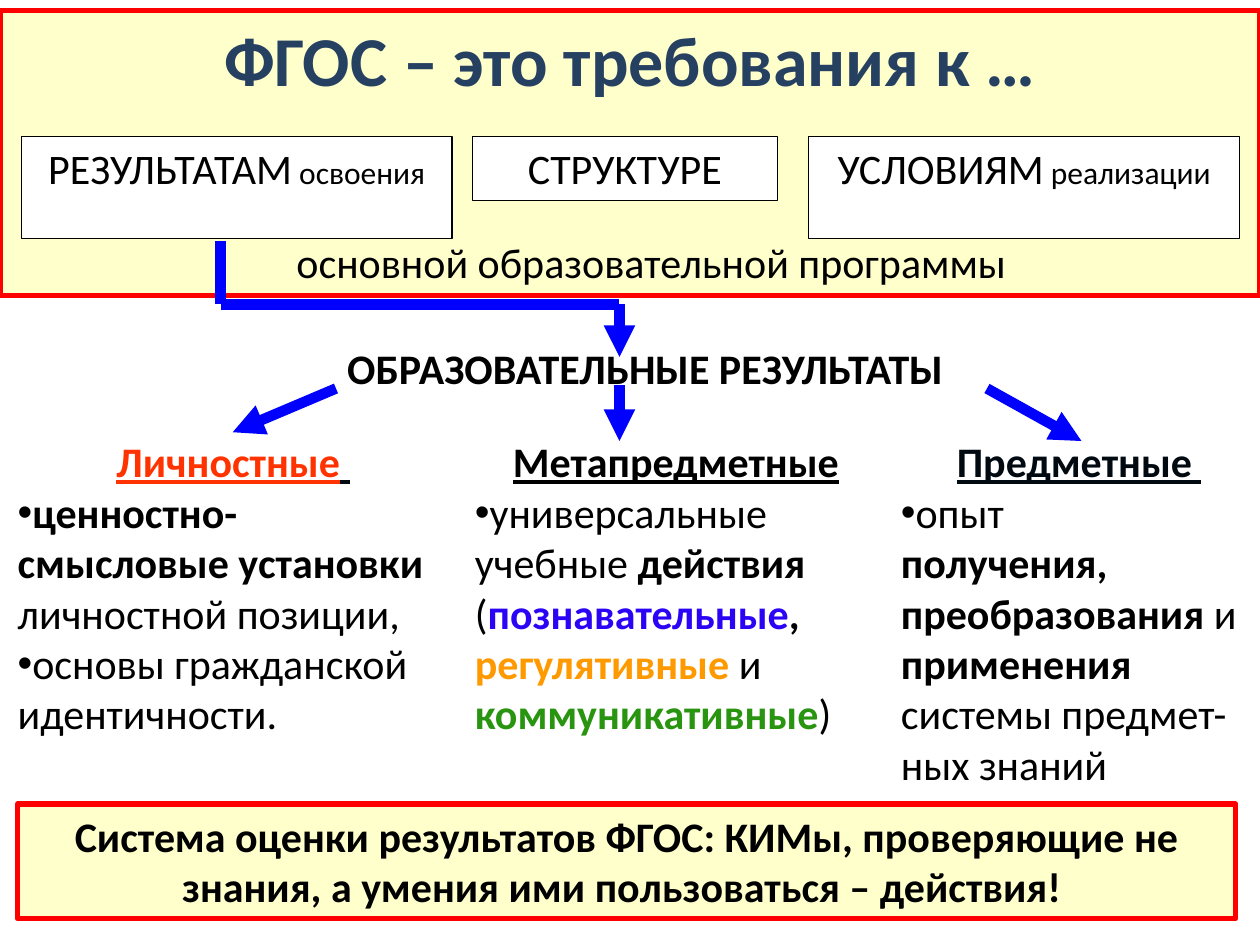
from lxml import etree
from pptx import Presentation
from pptx.dml.color import RGBColor
from pptx.enum.shapes import MSO_CONNECTOR, MSO_SHAPE
from pptx.enum.text import MSO_ANCHOR, MSO_AUTO_SIZE, PP_ALIGN
from pptx.oxml.ns import qn
from pptx.util import Pt

RECT, STRAIGHT = MSO_SHAPE.RECTANGLE, MSO_CONNECTOR.STRAIGHT
TOP, FIXED = MSO_ANCHOR.TOP, MSO_AUTO_SIZE.NONE
LEFT, CENTER = PP_ALIGN.LEFT, PP_ALIGN.CENTER
COMPARISON_LAYOUT = 4

COLORS = {
    "black": "000000", "white": "FFFFFF", "cream": "FFFFCC", "red": "FF0000",
    "blue": "0000FF", "navy": "254061", "ink": "000A10", "scarlet": "FF3300",
    "violet": "2B03F5", "orange": "FF9900", "green": "299410",
}


def rgb(name):
    return RGBColor.from_string(COLORS[name])


def run(text, size=24, color="black", bold=False, underline=False):
    """Describe a piece of text with its format."""
    return text, size, color, bold, underline


class Deck:
    font = "Calibri"

    def __init__(self):
        self.prs = Presentation()
        self.prs.slide_width, self.prs.slide_height = Pt(720), Pt(540)
        layout = self.prs.slide_layouts[COMPARISON_LAYOUT]
        self.slide = self.prs.slides.add_slide(layout)
        self.shapes = self.slide.shapes

    def style(self, sp, fill=None, line=None, width=0.75):
        if fill:
            sp.fill.solid()
            sp.fill.fore_color.rgb = rgb(fill)
        if line:
            sp.line.color.rgb = rgb(line)
            sp.line.width = Pt(width)
        else:
            sp.line.fill.background()

    def fill_text(self, sp, paragraphs):
        """Fill a shape from (align, bulleted, runs) paragraphs."""
        tf = sp.text_frame
        tf.word_wrap, tf.auto_size, tf.vertical_anchor = True, FIXED, TOP
        for i, (align, bulleted, runs) in enumerate(paragraphs):
            p = tf.add_paragraph() if i else tf.paragraphs[0]
            p.alignment = align
            p.space_before = Pt(0)
            pPr = p._p.get_or_add_pPr()
            pPr.set("marL", "0")
            pPr.set("indent", "0")
            if bulleted:
                etree.SubElement(pPr, qn("a:buFont")).set("typeface", "Arial")
                etree.SubElement(pPr, qn("a:buChar")).set("char", "•")
            else:
                etree.SubElement(pPr, qn("a:buNone"))
            for text, size, color, bold, underline in runs:
                r = p.add_run()
                r.text = text
                r.font.name, r.font.size = self.font, Pt(size)
                r.font.color.rgb = rgb(color)
                r.font.bold, r.font.underline = bold, underline

    def box(self, bounds, *runs, **look):
        sp = self.shapes.add_shape(RECT, *map(Pt, bounds))
        sp.shadow.inherit = False
        self.style(sp, **look)
        if runs:
            self.fill_text(sp, [(CENTER, False, runs)])

    def label(self, bounds, *runs):
        sp = self.shapes.add_textbox(*map(Pt, bounds))
        self.fill_text(sp, [(CENTER, False, runs)])

    def placeholder(self, idx, bounds, paragraphs, **look):
        """Move a template placeholder to the front, format and fill it."""
        sp = self.slide.placeholders[idx]
        self.shapes.element.append(sp.element)
        sp.left, sp.top, sp.width, sp.height = map(Pt, bounds)
        self.style(sp, **look)
        self.fill_text(sp, paragraphs)

    def line(self, start, end, arrow=True, shapes=None):
        shapes = shapes or self.shapes
        c = shapes.add_connector(STRAIGHT, *map(Pt, start + end))
        c.line.color.rgb, c.line.width = rgb("blue"), Pt(6)
        if arrow:
            ln = c.line._get_or_add_ln()
            etree.SubElement(ln, qn("a:tailEnd")).set("type", "triangle")
        etree.SubElement(c._element.spPr, qn("a:effectLst"))

    def elbow(self, *points):
        """Draw grouped lines through the points, with an arrow at the last."""
        group = self.shapes.add_group_shape()
        for start, end in zip(points, points[1:]):
            self.line(start, end, end == points[-1], group.shapes)

    def finish(self):
        for sp in list(self.slide.placeholders):
            if not sp.text_frame.text:
                self.shapes.element.remove(sp.element)
        self.prs.save("out.pptx")


def main():
    deck = Deck()

    deck.box((42.5, 192.2, 652.3, 79.9),
             run("ОБРАЗОВАТЕЛЬНЫЕ РЕЗУЛЬТАТЫ", bold=True), fill="white")
    deck.box((0, 220.3, 720, 236.2), fill="white")

    subject = [
        (CENTER, False, [run("Предметные ", color="ink", bold=True, underline=True)]),
        (LEFT, True, [run("опыт")]),
        (LEFT, False, [run("получения, преобразования ", bold=True), run("и "),
                       run("применения", bold=True),
                       run(" системы предмет-ных знаний")]),
    ]
    meta = [
        (CENTER, False, [run("Метапредметные", bold=True, underline=True)]),
        (LEFT, True, [run("универсальные учебные"), run(" действия", bold=True),
                      run(" ("), run("познавательные", color="violet", bold=True),
                      run(", ", bold=True),
                      run("регулятивные ", color="orange", bold=True), run("и "),
                      run("коммуникативные", color="green", bold=True), run(")")]),
    ]
    personal = [
        (CENTER, False, [run("Личностные", color="scarlet", bold=True, underline=True),
                         run(" ", color="ink", bold=True, underline=True)]),
        (LEFT, True, [run("ценностно-смысловые установки ", bold=True),
                      run("личностной позиции,")]),
        (LEFT, True, [run("основы гражданской идентичности.")]),
    ]
    columns = [(507.6, 218.2, subject), (264.2, 244.1, meta), (2.9, 260.6, personal)]
    for idx, (left, width, paragraphs) in enumerate(columns, start=1):
        deck.placeholder(idx, (left, 245.5, width, 211), paragraphs)

    title = run("ФГОС – это требования к …", size=40, color="navy", bold=True)
    deck.placeholder(0, (0, 6, 720, 162.7), [(CENTER, False, [title])],
                     fill="cream", line="red", width=3)

    requirements = [
        (270, 174.2, 36.7, [run("СТРУКТУРЕ")]),
        (12.2, 246.2, 58.3, [run("РЕЗУЛЬТАТАМ"), run(" освоения", size=18)]),
        (462.2, 246.2, 58.3, [run("УСЛОВИЯМ"), run(" реализации", size=18)]),
    ]
    for left, width, height, runs in requirements:
        deck.box((left, 77.8, width, height), *runs, fill="white", line="black")
    deck.label((84.2, 131.8, 576, 36), run("основной образовательной программы"))

    deck.elbow((126, 138), (126, 174), (354, 174), (354, 204))
    deck.line((354, 220.3), (354, 252))
    deck.line((192, 222), (133, 247))
    deck.line((564, 222), (618, 252))

    deck.box((10, 459.4, 696.2, 65.5),
             run("Система оценки результатов ФГОС: КИМы, проверяющие не знания, "
                 "а умения ими пользоваться – действия! ", bold=True),
             fill="cream", line="red", width=3)
    deck.finish()


if __name__ == "__main__":
    main()
